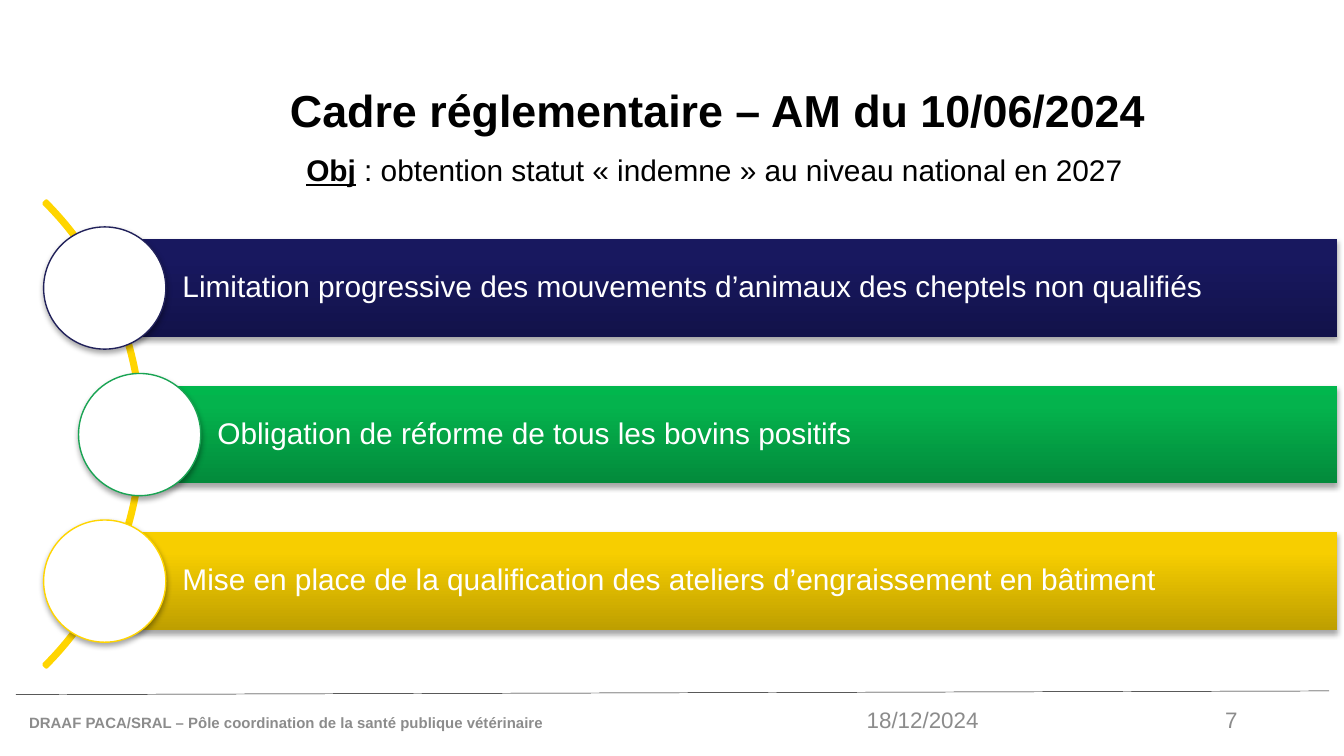
import copy

import lxml.etree
import pptx
import pptx.dml.color
import pptx.enum.shapes
import pptx.enum.text
import pptx.oxml.ns
import pptx.util

Cm, Pt = pptx.util.Cm, pptx.util.Pt
RGB = pptx.dml.color.RGBColor.from_string
SHAPE = pptx.enum.shapes.MSO_SHAPE
ALIGN = pptx.enum.text.PP_ALIGN
ANCHOR = pptx.enum.text.MSO_ANCHOR
qn = pptx.oxml.ns.qn

THEME = {
    "font": "Arial",
    "ink": "000000", "paper": "FFFFFF", "muted": "8C8C8C", "arc": "FFD500",
    "title": 24, "body": 16, "footer": 12, "department": 8,
}


def write(frame, runs, size, color, align=ALIGN.LEFT, anchor=ANCHOR.MIDDLE,
          spacing=1.0, insets=(0.25, 0.13, 0.25, 0.13)):
    """Fill a text frame with one paragraph of (text, font format) runs."""
    left, top, right, bottom = map(Cm, insets)
    frame_format = {"word_wrap": True, "vertical_anchor": anchor,
                    "margin_left": left, "margin_top": top,
                    "margin_right": right, "margin_bottom": bottom}
    for name, value in frame_format.items():
        setattr(frame, name, value)
    paragraph = frame.paragraphs[0]
    paragraph.alignment = align
    paragraph.line_spacing = spacing
    for text, extra in runs:
        run = paragraph.add_run()
        run.text = text
        run.font.color.rgb = RGB(THEME[color])
        font_format = {"name": THEME["font"], "size": Pt(THEME[size]), **extra}
        for name, value in font_format.items():
            setattr(run.font, name, value)


def cast_shadow(shape):
    """Give a shape a soft shadow straight below it."""
    shape.shadow.inherit = False
    effects = shape._element.spPr.find(qn("a:effectLst"))
    outer = lxml.etree.SubElement(effects, qn("a:outerShdw"), {
        "blurRad": str(Pt(3.1)), "dist": str(Pt(1.8)),
        "dir": "5400000", "rotWithShape": "0"})
    tint = lxml.etree.SubElement(outer, qn("a:srgbClr"), val=THEME["ink"])
    lxml.etree.SubElement(tint, qn("a:alpha"), val="35000")


presentation = pptx.Presentation()
presentation.slide_width, presentation.slide_height = Cm(25.4), Cm(14.29)
slide = presentation.slides.add_slide(presentation.slide_layouts[6])
shapes = slide.shapes

# Footer rule
rule = shapes.add_connector(pptx.enum.shapes.MSO_CONNECTOR.STRAIGHT,
                            Cm(0.3), Cm(13.13), Cm(25.12), Cm(13.06))
rule.line.color.rgb = RGB(THEME["ink"])
rule.line.width = Pt(0.25)
lxml.etree.SubElement(rule._element.spPr, qn("a:effectLst"))

# Title, objective and footer texts
BOLD = {"bold": True}
texts = [
    ((5.23, 0.76, 18.42, 2.77), [("Cadre réglementaire – AM du 10/06/2024", BOLD)],
     {"size": "title", "color": "ink", "spacing": 0.9}),
    ((5.54, 2.82, 16.18, 0.86),
     [("Obj", {"bold": True, "underline": True}),
      (" : obtention statut « indemne » au niveau national en 2027", {})],
     {"size": "body", "color": "ink", "spacing": 0.9, "anchor": ANCHOR.TOP}),
    ((0.3, 13.28, 10.49, 0.76),
     [("DRAAF PACA/SRAL – Pôle coordination de la santé publique vétérinaire", BOLD)],
     {"size": "department", "color": "muted"}),
    ((16.13, 13.23, 2.77, 0.76), [("18/12/2024", {})],
     {"size": "footer", "color": "muted"}),
    ((22.07, 13.23, 1.57, 0.76), [("7", {})],
     {"size": "footer", "color": "muted", "align": ALIGN.RIGHT}),
]
for place, runs, text_format in texts:
    write(shapes.add_textbox(*map(Cm, place)).text_frame, runs, **text_format)

# Arc behind the measures
arc = shapes.add_shape(SHAPE.BLOCK_ARC, Cm(-9.75), Cm(1.98), Cm(12.45), Cm(12.45))
for index, value in enumerate((189, 27, 0.005)):  # 315° to 45°, hairline band
    arc.adjustments[index] = value
arc.shadow.inherit = False
arc.fill.background()
arc.line.color.rgb = RGB(THEME["arc"])
arc.line.width = Pt(2)

# Measures: a graded bar with a circle on its left end
BAR_TOP, BAR_STEP, BAR_HEIGHT, BAR_RIGHT = 4.52, 2.77, 1.85, 25.27
DIAMETER = 2.31
measures = [
    ("Limitation progressive des mouvements d’animaux des cheptels non qualifiés",
     1.98, ("12124A", "18185F", "161661"), "21215A"),
    ("Obligation de réforme de tous les bovins positifs",
     2.64, ("038A3B", "04B34D", "01B74D"), "19A453"),
    ("Mise en place de la qualification des ateliers d’engraissement en bâtiment",
     1.98, ("BE9F00", "F7CE00", "F8CF00"), "FFD500"),
]
for row, (label, left, shades, outline) in enumerate(measures):
    top = BAR_TOP + row * BAR_STEP
    bar = shapes.add_shape(SHAPE.RECTANGLE, Cm(left), Cm(top),
                           Cm(BAR_RIGHT - left), Cm(BAR_HEIGHT))
    bar.line.fill.background()
    bar.fill.gradient()
    bar.fill.gradient_angle = 90
    stop_list = bar._element.spPr.find(".//" + qn("a:gsLst"))
    stop_list.append(copy.deepcopy(stop_list[0]))
    for stop, position, shade in zip(bar.fill.gradient_stops, (0, 0.8, 1), shades):
        stop.position = position
        stop.color.rgb = RGB(shade)
    cast_shadow(bar)
    write(bar.text_frame, [(label, {})], "body", "paper", spacing=0.9,
          insets=(1.47, 0.1, 0.1, 0.1))

    circle = shapes.add_shape(SHAPE.OVAL, Cm(left - DIAMETER / 2),
                              Cm(top + (BAR_HEIGHT - DIAMETER) / 2),
                              Cm(DIAMETER), Cm(DIAMETER))
    circle.fill.solid()
    circle.fill.fore_color.rgb = RGB(THEME["paper"])
    circle.line.color.rgb = RGB(outline)
    circle.line.width = Pt(0.75)
    cast_shadow(circle)

presentation.save("out.pptx")
